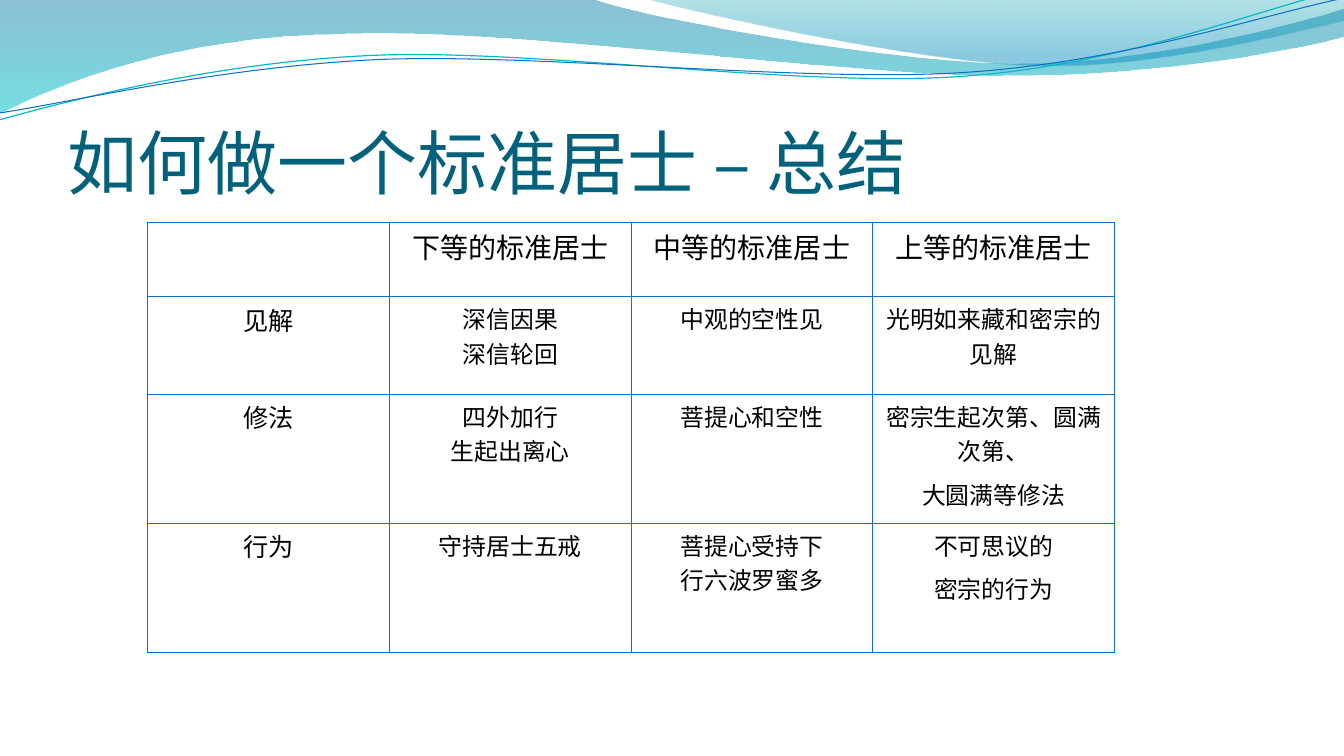
from math import cos, radians, sin

from lxml.etree import SubElement
from pptx import Presentation
from pptx.dml.color import RGBColor
from pptx.enum.text import MSO_ANCHOR, PP_ALIGN
from pptx.oxml.ns import qn
from pptx.util import Emu, Pt

# The grid: 1333 columns by 750 rows of square units
COLUMNS, ROWS, UNIT = 1333, 750, 9144

BLUE, BLACK, TITLE_TEAL = "0F6FC6", "000000", "04617B"
LATIN, CHINESE = "Calibri", "Noto Sans CJK SC"
STRAND_TILT = -2.7


def grid(units):
    return Emu(round(units * UNIT))


def color(hex_string):
    return RGBColor.from_string(hex_string)


def write(paragraph, text, size, font=CHINESE, ink=BLACK, align=PP_ALIGN.LEFT, after=0):
    paragraph.alignment = align
    paragraph.space_after = Pt(after)
    run = paragraph.add_run()
    run.text = text
    run.font.size = Pt(size)
    run.font.name = font
    run.font.color.rgb = color(ink)
    SubElement(run.font._element, qn("a:ea"), typeface=CHINESE)


def turn(point, pivot, degrees):
    angle = radians(degrees)
    dx, dy = point[0] - pivot[0], point[1] - pivot[1]
    return (pivot[0] + dx * cos(angle) - dy * sin(angle),
            pivot[1] + dx * sin(angle) + dy * cos(angle))


class WaveSlide:
    def __init__(self, presentation):
        self.slide = presentation.slides.add_slide(presentation.slide_layouts[6])
        self.shapes = self.slide.shapes

    def outline(self, start, segments, close):
        """A segment of one point is a straight line, one of three a cubic curve."""
        builder = self.shapes.build_freeform(*map(grid, start))
        builder.add_line_segments(
            [(grid(x), grid(y)) for segment in segments for x, y in segment], close=close)
        shape = builder.convert_to_shape()
        shape.shadow.inherit = False
        lines = iter(list(shape._element.spPr.iter(qn("a:lnTo"))))
        for segment in segments:
            first, *others = [next(lines) for _ in segment]
            if others:
                first.tag = qn("a:cubicBezTo")
                for line in others:
                    first.append(line[0])
                    line.getparent().remove(line)
        return shape

    def band(self, start, segments, stops):
        """A closed wave; each stop is (position, colour, opacity in percent)."""
        shape = self.outline(start, segments, close=True)
        shape.line.fill.background()
        shape.fill.gradient()
        shape.fill.gradient_angle = 270
        for stop, (position, shade, _) in zip(shape.fill.gradient_stops, stops):
            stop.position = position
            stop.color.rgb = color(shade)
        shades = shape._element.spPr.iter(qn("a:srgbClr"))
        for shade, (_, _, opacity) in zip(list(shades), stops):
            SubElement(shade, qn("a:alpha"), val=str(opacity * 1000))

    def strand(self, start, segments, pivot, ink, width):
        """A thin curve, built level and then tilted about its pivot."""
        level = [[turn(point, pivot, -STRAND_TILT) for point in segment]
                 for segment in segments]
        shape = self.outline(turn(start, pivot, -STRAND_TILT), level, close=False)
        shape.rotation = STRAND_TILT
        shape.fill.background()
        shape.line.color.rgb = color(ink)
        shape.line.width = Pt(width)

    def title(self, text, left, top, width, height):
        box = self.shapes.add_textbox(*map(grid, (left, top, width, height)))
        frame = box.text_frame
        frame.word_wrap = True
        frame.vertical_anchor = MSO_ANCHOR.BOTTOM
        frame.margin_left = frame.margin_right = frame.margin_bottom = 0
        frame.margin_top = grid(5)
        write(frame.paragraphs[0], text, size=50, font=LATIN, ink=TITLE_TEAL)

    def table(self, content, left, top, column_width, row_heights):
        rows, columns = len(content), len(content[0])
        table = self.shapes.add_table(
            rows, columns, grid(left), grid(top),
            grid(column_width * columns), grid(sum(row_heights))).table
        table.first_row = table.horz_banding = False
        for column in table.columns:
            column.width = grid(column_width)
        for r, (height, texts) in enumerate(zip(row_heights, content)):
            table.rows[r].height = grid(height)
            for c, text in enumerate(texts):
                size = 20 if r == 0 else 18 if c == 0 else 17
                # Only the header and the last column space their paragraphs
                after = 6 if r == 0 or c == columns - 1 else 0
                self.cell(table.cell(r, c), text, size, after)

    def cell(self, cell, text, size, after):
        cell.margin_left = cell.margin_right = grid(4)
        cell.margin_top = cell.margin_bottom = grid(4)
        properties = cell._tc.get_or_add_tcPr()
        for side in ("L", "R", "T", "B"):
            border = SubElement(properties, qn(f"a:ln{side}"), w=str(Pt(1)))
            fill = SubElement(border, qn("a:solidFill"))
            SubElement(fill, qn("a:srgbClr"), val=BLUE)
        cell.fill.background()
        frame = cell.text_frame
        for i, line in enumerate(text.splitlines()):
            paragraph = frame.add_paragraph() if i else frame.paragraphs[0]
            write(paragraph, line, size, align=PP_ALIGN.CENTER, after=after)


def main():
    presentation = Presentation()
    presentation.slide_width, presentation.slide_height = grid(COLUMNS), grid(ROWS)
    page = WaveSlide(presentation)

    # Waves across the top
    page.band((0, 0), [
        [(587, -1)],
        [(634, 17), (885, 63), (1011, 63)],
        [(1138, 63), (1278, 26), (1333, 9)],
        [(1335, 36)],
        [(1311, 44), (1160, 76), (994, 75)],
        [(829, 75), (509, 28), (343, 34)],
        [(172, 36), (61, 83), (-1, 113)],
    ], stops=[(0, "0074A1", 45), (1, "00C6CF", 55)])
    page.band((639, -1), [
        [(679, 11), (909, 62), (1025, 65)],
        [(1141, 69), (1282, 32), (1333, 21)],
        [(1333, 0)],
    ], stops=[(0, "00A1A9", 30), (0.8, "008BBF", 45)])

    # Thin strands along the waves
    page.strand((-1, 119), [
        [(64, 101), (211, 62), (369, 55)],
        [(527, 48), (790, 87), (950, 76)],
        [(1110, 66), (1252, 8), (1331, -10)],
    ], pivot=(665, 57.5), ink="0AB8BF", width=0.85)
    page.strand((0, 112), [
        [(63, 103), (218, 66), (378, 59)],
        [(537, 53), (796, 82), (955, 72)],
        [(1115, 62), (1255, 14), (1334, -2)],
    ], pivot=(667, 59), ink=BLUE, width=0.75)

    # Title
    page.title("如何做一个标准居士 – 总结", left=67, top=77, width=1200, height=125)

    # Summary table
    summary = [
        ["", "下等的标准居士", "中等的标准居士", "上等的标准居士"],
        ["见解", "深信因果\n深信轮回", "中观的空性见", "光明如来藏和密宗的见解"],
        ["修法", "四外加行\n生起出离心", "菩提心和空性",
         "密宗生起次第、圆满次第、\n大圆满等修法"],
        ["行为", "守持居士五戒", "菩提心受持下\n行六波罗蜜多",
         "不可思议的\n密宗的行为"],
    ]
    page.table(summary, left=146.5, top=220.5, column_width=239.75,
               row_heights=[74, 97, 128, 128])

    presentation.save("out.pptx")


if __name__ == "__main__":
    main()
